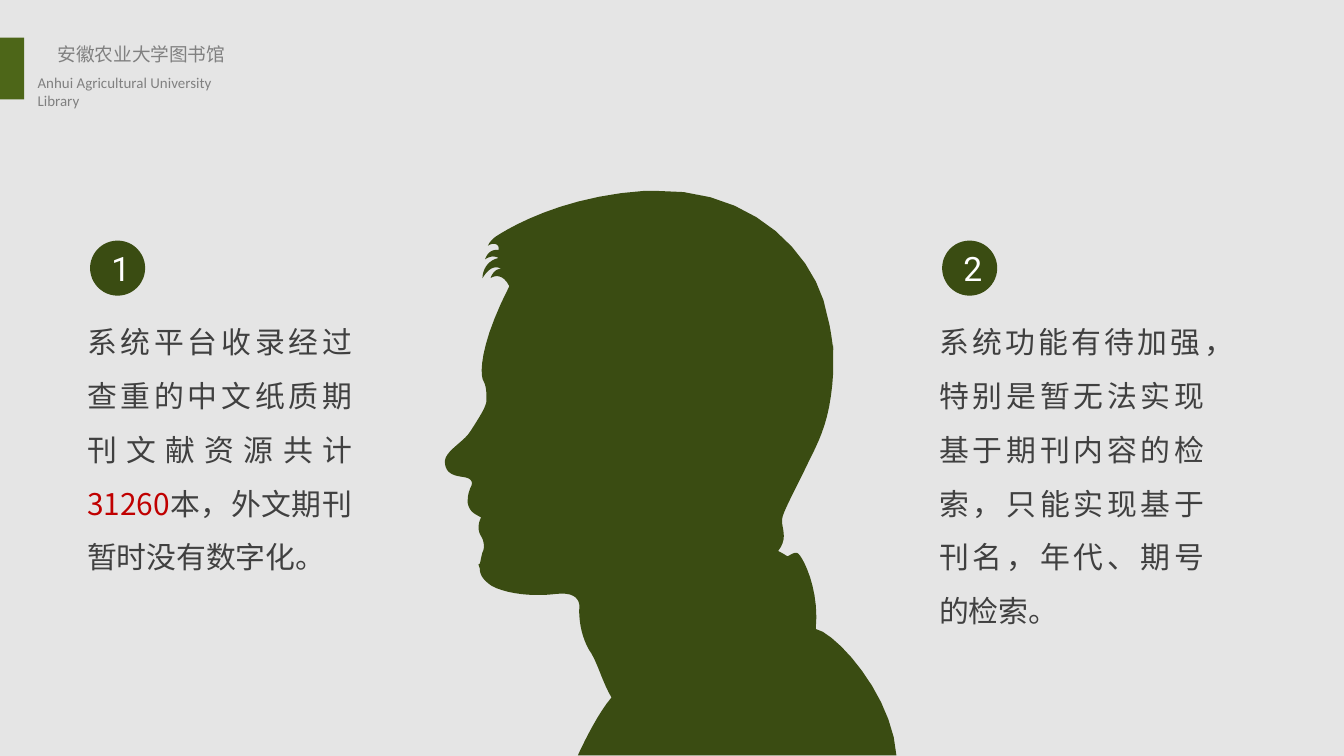
from dataclasses import dataclass

from lxml.etree import SubElement
from pptx import Presentation
from pptx.dml.color import RGBColor
from pptx.enum.lang import MSO_LANGUAGE_ID
from pptx.enum.shapes import MSO_SHAPE
from pptx.enum.text import MSO_ANCHOR, PP_ALIGN
from pptx.oxml.ns import qn
from pptx.util import Inches, Pt

CJK = "Noto Sans CJK SC"
OLIVE = "3A4C12"
GREY = "808080"
DARK = "404040"
RED = "C00000"
CURVE_STEPS = 10


@dataclass
class Point:
    number: str
    text_left: float
    badge_left: float
    height: float
    runs: list[tuple[str, str]]


@dataclass
class Outline:
    start: tuple[float, float]
    segments: list[tuple[float, ...]]


POINTS = [
    Point("1", 0.55, 0.67, 2.24, [
        ("系统平台收录经过查重的中文纸质期刊文献资源共计", DARK),
        ("31260", RED),
        ("本，外文期刊暂时没有数字化。", DARK),
    ]),
    Point("2", 6.89, 7.01, 2.47, [
        ("系统功能有待加强，特别是暂无法实现基于期刊内容的检索，"
         "只能实现基于刊名，年代、期号的检索。", DARK),
    ]),
]

BODY = Outline((6.2, 2.57), [
    (6.2, 2.65), (6.2, 2.69, 6.2, 2.73, 6.2, 2.77),
    (6.18, 3.11, 6.11, 3.25, 6.01, 3.45), (5.91, 3.66, 5.83, 3.8, 5.82, 3.86),
    (5.81, 3.92, 5.87, 4, 5.79, 4.1), (5.81, 4.11, 5.83, 4.12, 5.86, 4.14),
    (5.88, 4.13, 5.92, 4.1, 5.94, 4.12), (5.97, 4.14, 6.1, 4.38, 6.07, 4.68),
    (6.22, 4.71, 6.64, 5.17, 6.67, 5.62), (4.3, 5.62),
    (4.3, 5.62, 4.43, 5.33, 4.55, 5.19), (4.47, 5.05, 4.45, 4.93, 4.38, 4.83),
    (4.32, 4.72, 4.31, 4.61, 4.31, 4.54), (4.32, 4.47, 4.29, 4.4, 4.13, 4.42),
    (3.97, 4.44, 3.77, 4.42, 3.66, 4.36), (3.6, 4.32, 3.57, 4.28, 3.57, 4.23),
    (3.56, 4.2), (3.8, 4.05), (5.89, 2.76, 6.16, 2.6, 6.19, 2.58),
])

HEAD = Outline((3.58, 3.99), [
    (3.6, 4.02, 3.61, 4.08, 3.59, 4.11), (3.58, 4.15, 3.57, 4.19, 3.57, 4.22),
    (6.2, 2.6), (6.19, 2.53, 6.18, 2.44, 6.16, 2.37),
    (6.09, 1.92, 5.62, 1.4, 4.87, 1.42), (4.8, 1.42),
    (4.18, 1.46, 3.78, 1.7, 3.69, 1.76), (3.65, 1.79, 3.64, 1.81, 3.63, 1.83),
    (3.65, 1.81, 3.72, 1.8, 3.71, 1.86), (3.63, 1.85, 3.61, 1.93, 3.61, 1.93),
    (3.61, 1.93, 3.66, 1.89, 3.71, 1.92), (3.62, 1.94, 3.59, 2.02, 3.59, 2.07),
    (3.61, 2.04, 3.66, 1.96, 3.73, 2), (3.67, 2, 3.65, 2.07, 3.65, 2.07),
    (3.65, 2.07, 3.73, 2.01, 3.79, 2.13), (3.56, 2.58, 3.57, 2.8, 3.6, 2.84),
    (3.62, 2.88, 3.62, 2.93, 3.62, 2.98), (3.62, 3.03, 3.55, 3.13, 3.5, 3.21),
    (3.45, 3.29, 3.32, 3.35, 3.31, 3.43), (3.31, 3.52, 3.37, 3.54, 3.45, 3.55),
    (3.52, 3.56, 3.52, 3.6, 3.5, 3.63), (3.49, 3.66, 3.48, 3.68, 3.48, 3.74),
    (3.49, 3.8, 3.52, 3.82, 3.58, 3.85), (3.55, 3.91, 3.56, 3.96, 3.58, 3.99),
])


def rgb(value: str) -> RGBColor:
    return RGBColor.from_string(value)


def paint(sp, color: str) -> None:
    sp.shadow.inherit = False
    sp.fill.solid()
    sp.fill.fore_color.rgb = rgb(color)
    sp.line.fill.background()


def add_run(p, text: str, *, size: float, font: str, color: str) -> None:
    r = p.add_run()
    r.text = text
    r.font.size = Pt(size)
    r.font.name = font
    r.font.color.rgb = rgb(color)
    if font == CJK:
        r.font.language_id = MSO_LANGUAGE_ID.SIMPLIFIED_CHINESE
        SubElement(r.font._element, qn("a:ea"), typeface=font)


def add_text(s, box: tuple[float, ...], wrap: bool = True,
             insets: tuple[float, float] = (0.1, 0.05)):
    tf = s.shapes.add_textbox(*map(Inches, box)).text_frame
    tf.word_wrap = wrap
    tf.margin_left = tf.margin_right = Inches(insets[0])
    tf.margin_top = tf.margin_bottom = Inches(insets[1])
    return tf.paragraphs[0]


def add_shape(s, kind: MSO_SHAPE, box: tuple[float, ...], color: str):
    sp = s.shapes.add_shape(kind, *map(Inches, box))
    paint(sp, color)
    return sp


def cubic(a: float, b: float, c: float, d: float, t: float) -> float:
    u = 1 - t
    return u**3 * a + 3 * u**2 * t * b + 3 * u * t**2 * c + t**3 * d


def flatten(outline: Outline) -> list[tuple[float, float]]:
    x, y = outline.start
    vertices = [outline.start]
    for seg in outline.segments:
        if len(seg) == 6:
            for i in range(1, CURVE_STEPS + 1):
                t = i / CURVE_STEPS
                vertices.append((cubic(x, *seg[::2], t), cubic(y, *seg[1::2], t)))
        else:
            vertices.append(seg)
        x, y = seg[-2:]
    return vertices


def add_outline(s, outline: Outline, color: str) -> None:
    start, *rest = [(Inches(x), Inches(y)) for x, y in flatten(outline)]
    builder = s.shapes.build_freeform(*start)
    builder.add_line_segments(rest, close=True)
    paint(builder.convert_to_shape(), color)


def add_point(s, point: Point) -> None:
    p = add_text(s, (point.text_left, 2.23, 2.17, point.height))
    p.alignment = PP_ALIGN.JUSTIFY
    p.line_spacing = 1.5
    for text, color in point.runs:
        add_run(p, text, size=16, font=CJK, color=color)
    badge = add_shape(s, MSO_SHAPE.OVAL, (point.badge_left, 1.79, 0.41, 0.41), OLIVE)
    tf = badge.text_frame
    tf.vertical_anchor = MSO_ANCHOR.MIDDLE
    p = tf.paragraphs[0]
    p.alignment = PP_ALIGN.CENTER
    add_run(p, point.number, size=18, font="Roboto", color="FFFFFF")


def add_header(s) -> None:
    p = add_text(s, (0.35, 0.28, 1.41, 0.24), wrap=False, insets=(0.08, 0.04))
    add_run(p, "安徽农业大学图书馆", size=10, font=CJK, color=GREY)
    p = add_text(s, (0.2, 0.51, 1.77, 0.21), insets=(0.08, 0.04))
    add_run(p, "Anhui Agricultural University Library", size=8, font="Calibri", color=GREY)
    add_shape(s, MSO_SHAPE.RECTANGLE, (0, 0.28, 0.18, 0.46), "4D6618")


def main() -> None:
    prs = Presentation()
    prs.slide_width = Inches(10)
    prs.slide_height = prs.slide_width * 9 // 16
    s = prs.slides.add_slide(prs.slide_layouts[6])
    s.background.fill.solid()
    s.background.fill.fore_color.rgb = rgb("E5E5E5")
    add_header(s)
    for outline in (BODY, HEAD):
        add_outline(s, outline, OLIVE)
    for point in POINTS:
        add_point(s, point)
    prs.save("out.pptx")


if __name__ == "__main__":
    main()
